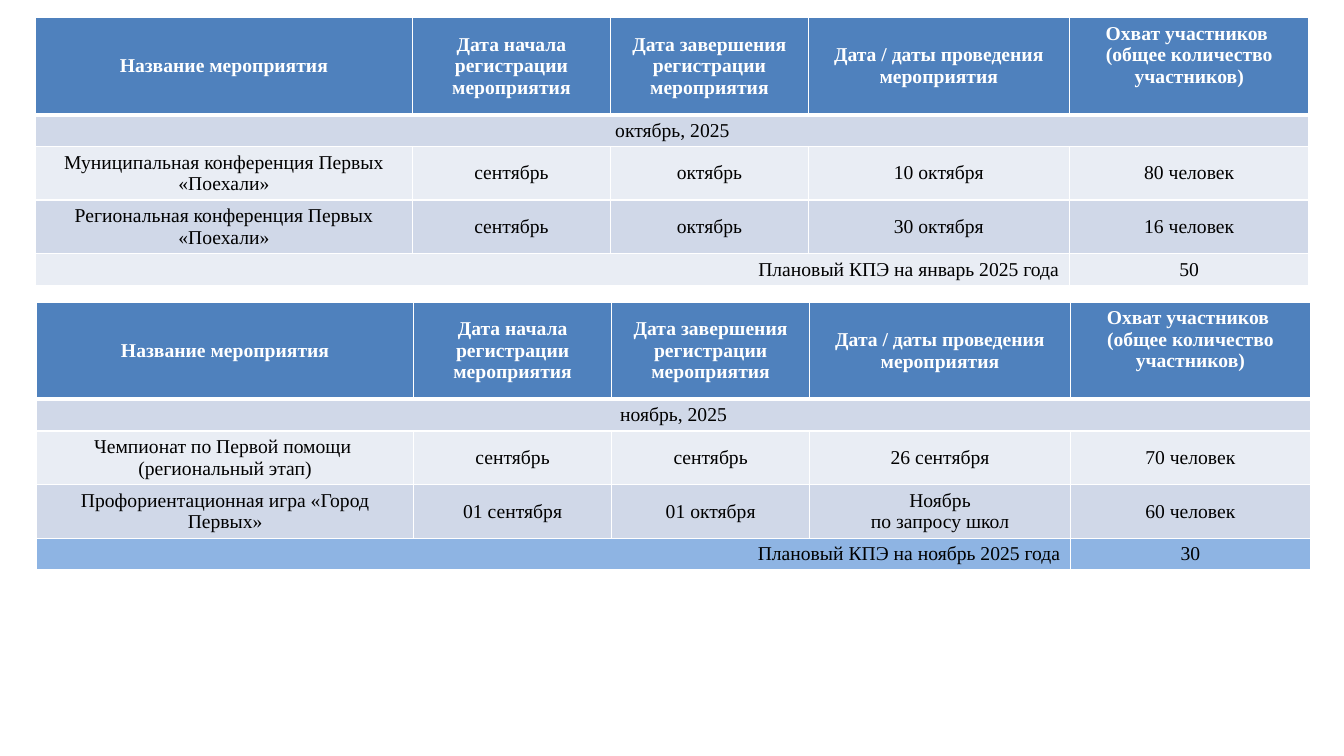
from lxml.etree import SubElement
from pptx import Presentation
from pptx.dml.color import RGBColor
from pptx.enum.text import MSO_ANCHOR, PP_ALIGN
from pptx.oxml.ns import qn
from pptx.util import Cm, Pt

COLORS = {
    "header": "4F81BD",
    "dark": "D0D8E8",
    "light": "E9EDF4",
    "accent": "8EB4E3",
    "white": "FFFFFF",
    "black": "000000",
}
COLUMN_WIDTHS = [9.49, 5, 4.98, 6.58, 6.04]
ROW_HEIGHTS = [2.45, 0.8, 1.35, 1.35, 0.8]
HEADINGS = [
    "Название мероприятия",
    "Дата начала регистрации мероприятия",
    "Дата завершения регистрации мероприятия",
    "Дата / даты проведения мероприятия",
    "Охват участников \n(общее количество участников)",
]
OCTOBER = {
    "month": "октябрь, 2025",
    "events": [
        ["Муниципальная конференция Первых «Поехали»", "сентябрь", "октябрь", "10 октября", "80 человек"],
        ["Региональная конференция Первых «Поехали»", "сентябрь", "октябрь", "30 октября", "16 человек"],
    ],
    "plan": ["Плановый КПЭ на январь 2025 года", "50"],
    "plan_color": "light",
}
NOVEMBER = {
    "month": "ноябрь, 2025",
    "events": [
        ["Чемпионат по Первой помощи \n(региональный этап)", "сентябрь", "сентябрь", "26 сентября", "70 человек"],
        ["Профориентационная игра «Город Первых»", "01 сентября", "01 октября", "Ноябрь\nпо запросу школ", "60 человек"],
    ],
    "plan": ["Плановый КПЭ на ноябрь 2025 года", "30"],
    "plan_color": "accent",
}


def apply_format(target, values):
    for name, value in values.items():
        setattr(target, name, value)


def add_borders(cell, widths):
    properties = cell._tc.get_or_add_tcPr()
    for side, width in widths.items():
        border = SubElement(properties, qn(f"a:ln{side}"), w=str(Pt(width)))
        fill = SubElement(border, qn("a:solidFill"))
        SubElement(fill, qn("a:srgbClr"), val=COLORS["white"])


def format_cell(cell, text, fill, is_header, alignment):
    cell.fill.solid()
    cell.fill.fore_color.rgb = RGBColor.from_string(COLORS[fill])
    cell.vertical_anchor = MSO_ANCHOR.MIDDLE
    cell.text = text
    for paragraph in cell.text_frame.paragraphs:
        paragraph.alignment = alignment
        apply_format(paragraph.font, {"name": "Times New Roman", "size": Pt(14), "bold": is_header})
        paragraph.font.color.rgb = RGBColor.from_string(COLORS["white" if is_header else "black"])


def add_schedule(slide, left, top, schedule):
    content = [
        HEADINGS,
        [schedule["month"], "", "", "", ""],
        *schedule["events"],
        [schedule["plan"][0], "", "", "", schedule["plan"][1]],
    ]
    fills = ["header", "dark", "light", "dark", schedule["plan_color"]]
    table = slide.shapes.add_table(
        len(content), len(HEADINGS), Cm(left), Cm(top), Cm(sum(COLUMN_WIDTHS)), Cm(sum(ROW_HEIGHTS))
    ).table
    apply_format(table, {"first_row": False, "horz_banding": False})
    for column, width in zip(table.columns, COLUMN_WIDTHS):
        column.width = Cm(width)
    for row, height in zip(table.rows, ROW_HEIGHTS):
        row.height = Cm(height)

    last_row = len(content) - 1
    table.cell(1, 0).merge(table.cell(1, 4))
    table.cell(last_row, 0).merge(table.cell(last_row, 3))
    for row_index, texts in enumerate(content):
        for column_index, text in enumerate(texts):
            cell = table.cell(row_index, column_index)
            add_borders(cell, {
                "L": 1,
                "R": 1,
                "T": 3 if row_index == 1 else 1,
                "B": 3 if row_index == 0 else 1,
            })
            is_plan_label = row_index == last_row and column_index == 0
            alignment = PP_ALIGN.RIGHT if is_plan_label else PP_ALIGN.CENTER
            format_cell(cell, text, fills[row_index], row_index == 0, alignment)
    table.cell(0, 4).margin_bottom = Cm(0.68)


def main():
    presentation = Presentation()
    apply_format(presentation, {"slide_width": Cm(33.87), "slide_height": Cm(19.05)})
    slide = presentation.slides.add_slide(presentation.slide_layouts[6])
    add_schedule(slide, 0.9, 0.44, OCTOBER)
    add_schedule(slide, 0.93, 7.61, NOVEMBER)
    presentation.save("out.pptx")


if __name__ == "__main__":
    main()
